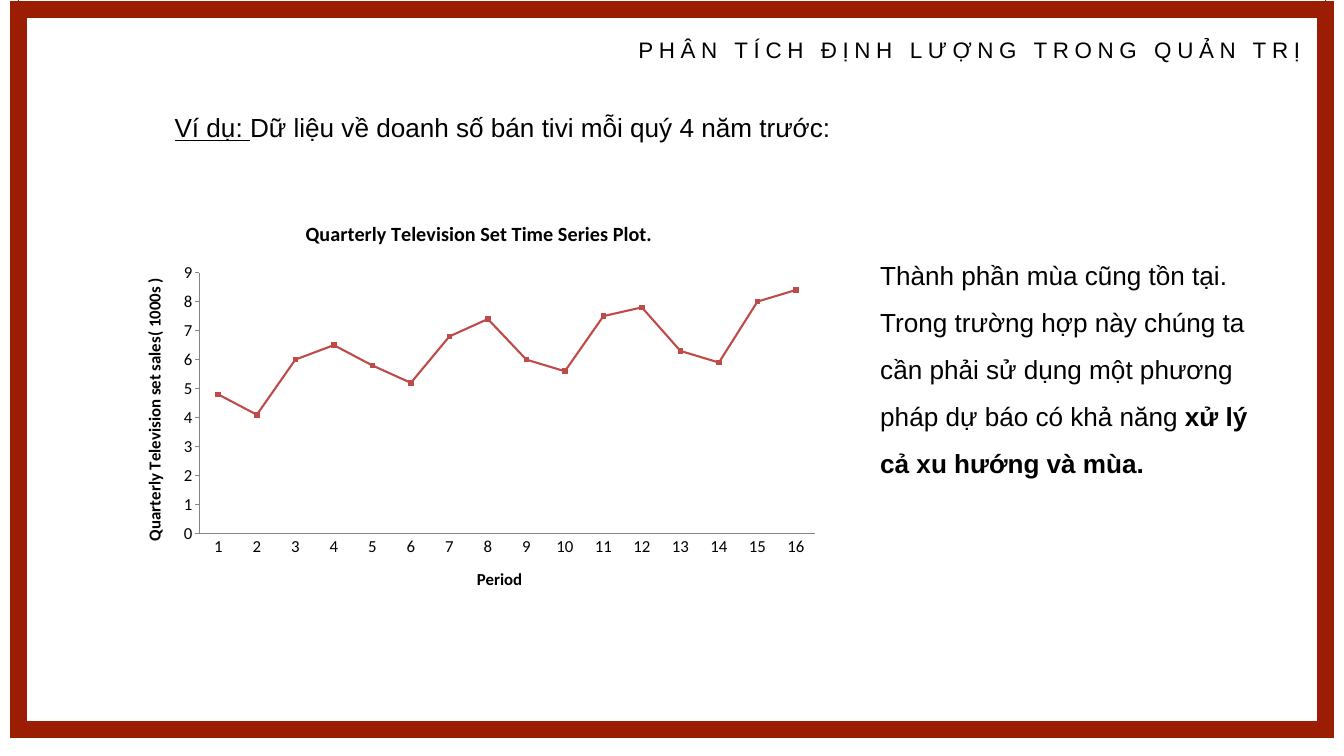
from lxml.etree import SubElement
from pptx import Presentation
from pptx.chart.data import CategoryChartData
from pptx.dml.color import RGBColor
from pptx.enum.chart import XL_CHART_TYPE as ChartType, XL_MARKER_STYLE as Marker, XL_TICK_MARK as Tick
from pptx.enum.shapes import MSO_SHAPE as Shape
from pptx.enum.text import MSO_ANCHOR as Anchor, MSO_AUTO_SIZE as AutoSize, PP_ALIGN as Align
from pptx.oxml import parse_xml
from pptx.oxml.ns import nsdecls, qn
from pptx.util import Inches, Pt

COLORS = {"frame": "9A1D04", "text": "000000", "series": "BE4B48", "axis": "868686"}
WIDTH, HEIGHT = 20, 11.25
MARGIN = 0.27
FRAME_WIDTH = WIDTH - 2 * MARGIN
FRAME_BOTTOM = 10.86

HEADER = "PHÂN TÍCH ĐỊNH LƯỢNG TRONG QUẢN TRỊ"
EXAMPLE = [("Ví dụ: ", "underline"), ("Dữ liệu về doanh số bán tivi mỗi quý 4 năm trước:", None)]
COMMENT = [
    ("Thành phần mùa cũng tồn tại.", "break"),
    ("Trong trường hợp này chúng ta cần phải sử dụng một phương pháp dự báo có khả năng ", None),
    ("xử lý cả xu hướng và mùa.", "bold"),
]
CHART_TITLE = "Quarterly Television Set Time Series Plot."
PERIOD_TITLE = "Period"
SALES_TITLE = "Quarterly Television set sales( 1000s )"
SALES = [4.8, 4.1, 6, 6.5, 5.8, 5.2, 6.8, 7.4, 6, 5.6, 7.5, 7.8, 6.3, 5.9, 8, 8.4]
PLOT_AREA = {"x": 0.1, "y": 0.17, "w": 0.88, "h": 0.65}


def color(name):
    return RGBColor.from_string(COLORS[name])


def set_font(font, name, size, bold=None):
    font.name, font.size, font.bold = name, Pt(size), bold
    font.color.rgb = color("text")


def add_frame(slide, top, weight):
    frame = slide.shapes.add_shape(Shape.RECTANGLE, Inches(MARGIN), Inches(top),
                                   Inches(FRAME_WIDTH), Inches(FRAME_BOTTOM - top))
    frame.shadow.inherit = False
    frame.fill.background()
    frame.line.color.rgb = color("frame")
    frame.line.width = Pt(weight)
    SubElement(frame.line._get_or_add_ln(), qn("a:miter"), lim="800000")


def place_header(slide):
    title = slide.shapes.title
    title.left, title.top, title.width, title.height = map(Inches, (9.5, 0.53, 10.72, 0.4))
    frame = title.text_frame
    frame.margin_left = frame.margin_right = frame.margin_top = frame.margin_bottom = 0
    frame.vertical_anchor = Anchor.TOP
    frame.auto_size = AutoSize.SHAPE_TO_FIT_TEXT
    frame.text = HEADER
    para = frame.paragraphs[0]
    para.alignment = Align.LEFT
    set_font(para.font, "Arial", 24)
    para.runs[0]._r.get_or_add_rPr().set("spc", "600")


def add_text(slide, place, spans, spacing=1.0):
    box = slide.shapes.add_textbox(*map(Inches, place))
    box.text_frame.word_wrap = True
    box.text_frame.auto_size = AutoSize.SHAPE_TO_FIT_TEXT
    para = box.text_frame.paragraphs[0]
    para.line_spacing = spacing
    set_font(para.font, "Arial", 28)
    for text, style in spans:
        span = para.add_run()
        span.text = text
        if style == "break":
            para.add_line_break()
        elif style:
            setattr(span.font, style, True)


def set_title(owner, text, size):
    owner.has_title = True
    para_frame = (owner.chart_title if hasattr(owner, "chart_title") else owner.axis_title).text_frame
    para_frame.text = text
    set_font(para_frame.paragraphs[0].font, "Calibri", size, True)


def add_sales_chart(slide):
    data = CategoryChartData()
    data.categories = [str(period) for period in range(1, len(SALES) + 1)]
    data.add_series("Series 1", SALES)
    chart = slide.shapes.add_chart(ChartType.LINE_MARKERS, *map(Inches, (1.92, 3.04, 10.42, 5.98)), data).chart
    set_font(chart.font, "Calibri", 18)
    chart.has_legend = False
    set_title(chart, CHART_TITLE, 21.6)
    set_title(chart.category_axis, PERIOD_TITLE, 18)
    set_title(chart.value_axis, SALES_TITLE, 18)
    for axis, tick in ((chart.category_axis, Tick.NONE), (chart.value_axis, Tick.OUTSIDE)):
        axis.has_major_gridlines = False
        axis.major_tick_mark, axis.minor_tick_mark = tick, Tick.NONE
        axis.format.line.color.rgb = color("axis")
    chart.value_axis.minimum_scale, chart.value_axis.maximum_scale = 0, 9
    chart.value_axis.major_unit = 1
    chart.plots[0].vary_by_categories = False
    series = chart.plots[0].series[0]
    series.smooth = False
    series.format.line.color.rgb = color("series")
    series.format.line.width = Pt(2.25)
    series.marker.style, series.marker.size = Marker.SQUARE, 5
    series.marker.format.fill.solid()
    series.marker.format.fill.fore_color.rgb = color("series")
    series.marker.format.line.color.rgb = color("series")

    plot_area = chart._chartSpace.chart.plotArea
    for old in plot_area.findall(qn("c:layout")):
        plot_area.remove(old)
    sizes = "".join(f'<c:{key} val="{share}"/>' for key, share in PLOT_AREA.items())
    plot_area.insert(0, parse_xml(
        f'<c:layout {nsdecls("c")}><c:manualLayout><c:layoutTarget val="inner"/>'
        f'<c:xMode val="edge"/><c:yMode val="edge"/>{sizes}</c:manualLayout></c:layout>'))


def main():
    deck = Presentation()
    deck.slide_width, deck.slide_height = Inches(WIDTH), Inches(HEIGHT)
    page = deck.slides.add_slide(deck.slide_layouts[5])
    add_frame(page, 0.14, 18)
    add_frame(page, -0.01, 0.75)
    add_text(page, (2.5, 1.61, 10, 0.57), EXAMPLE)
    add_sales_chart(page)
    add_text(page, (13, 3.58, 5.75, 3.55), COMMENT, 1.5)
    place_header(page)
    deck.save("out.pptx")


if __name__ == "__main__":
    main()
